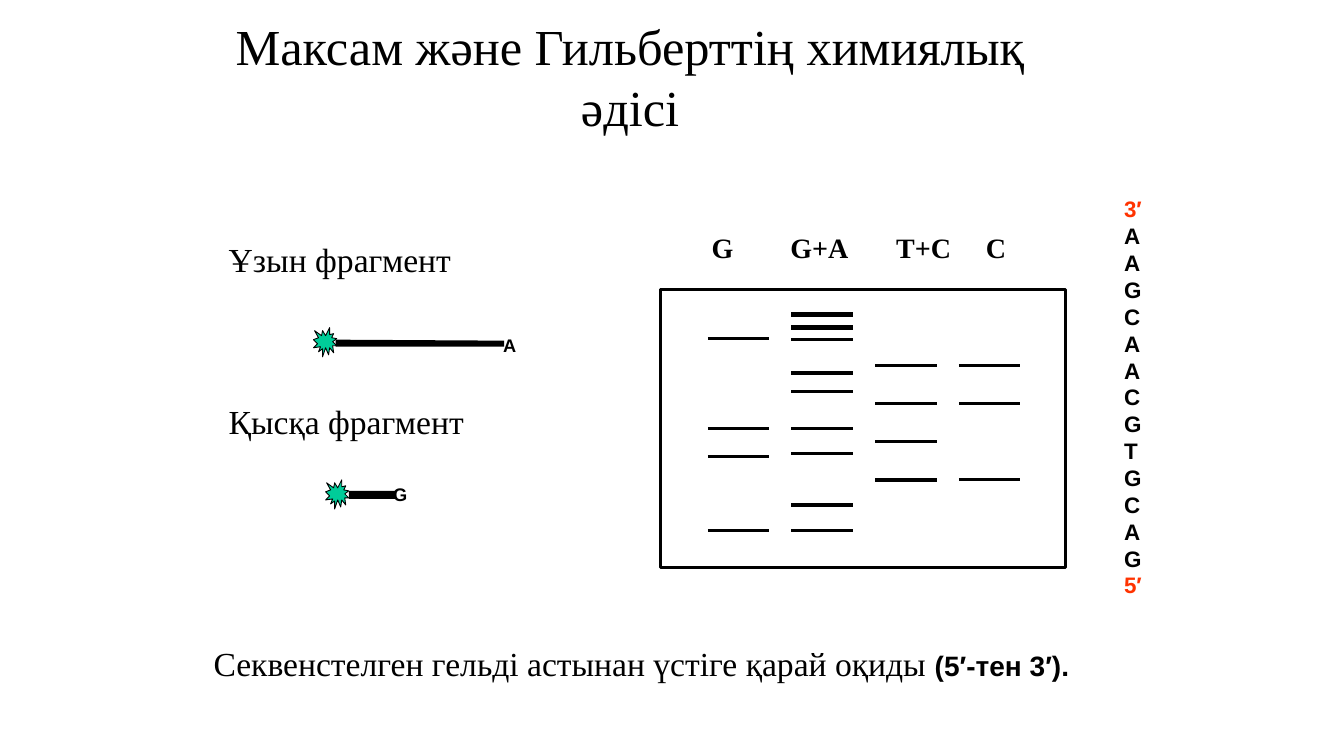
import pptx
import pptx.dml.color
import pptx.enum.shapes
import pptx.enum.text
import pptx.oxml
import pptx.oxml.ns
import pptx.util
from pptx.util import Inches

BLACK, WHITE, RED, GREEN = "000000", "FFFFFF", "FF3300", "00CC99"
SERIF, SANS = "Times New Roman", "Arial"
ALIGN = pptx.enum.text.PP_ALIGN

BAND_WIDTH = 0.61
LANE_LEFT, LANE_STEP = 7.02, 0.83
# Band heights for each lane: G, G+A, T+C, C
LANES = [
    [3.36, 4.25, 4.53, 5.26],
    [3.12, 3.25, 3.37, 3.7, 3.88, 4.25, 4.5, 5.01, 5.26],
    [3.63, 4, 4.38, 4.76],
    [3.63, 4, 4.76],
]
THICK_BANDS = {(1, 3.12), (1, 3.25), (2, 4.76)}
LABEL_TABS = [0.78, 1.83, 2.72]
SEQUENCE = "AAGCAACGTGCAG"

LABEL_STAR = [
    (0.12, 0.08), (0.09, 0.03), (0.08, 0.08), (0.01, 0.03), (0.05, 0.1), (0, 0.12),
    (0.04, 0.16), (0, 0.2), (0.07, 0.19), (0.05, 0.24), (0.09, 0.21), (0.09, 0.29),
    (0.12, 0.2), (0.15, 0.27), (0.16, 0.2), (0.2, 0.25), (0.19, 0.18), (0.23, 0.18),
    (0.19, 0.14), (0.23, 0.11), (0.18, 0.1), (0.2, 0.06), (0.16, 0.07), (0.16, 0),
]


def color(value):
    return pptx.dml.color.RGBColor.from_string(value)


def paint(shape, fill, line=None, line_width=0):
    shape.shadow.inherit = False
    shape.fill.solid()
    shape.fill.fore_color.rgb = color(fill)
    if line:
        shape.line.color.rgb = color(line)
        shape.line.width = pptx.util.Pt(line_width)
    else:
        shape.line.fill.background()


def add_run(paragraph, text, size, font=SERIF, bold=False, fill=BLACK):
    run = paragraph.add_run()
    run.text = text
    run.font.size = pptx.util.Pt(size)
    run.font.name = font
    run.font.bold = bold
    run.font.color.rgb = color(fill)


def add_text_box(slide, left, top, width, height, wrap=True, inset=True):
    """Add an empty text box and return its text frame."""
    box = slide.shapes.add_textbox(Inches(left), Inches(top), Inches(width), Inches(height))
    frame = box.text_frame
    frame.word_wrap = wrap
    if not inset:
        frame.margin_left = frame.margin_right = 0
        frame.margin_top = frame.margin_bottom = 0
    return frame


def add_rectangle(slide, left, top, width, height, *style):
    shape = slide.shapes.add_shape(
        pptx.enum.shapes.MSO_SHAPE.RECTANGLE,
        Inches(left), Inches(top), Inches(width), Inches(height))
    paint(shape, *style)


def add_polygon(slide, left, top, points, *style):
    corners = [(Inches(left + x), Inches(top + y)) for x, y in points]
    builder = slide.shapes.build_freeform(*corners[0])
    builder.add_line_segments(corners[1:], close=True)
    paint(builder.convert_to_shape(), *style)


def add_band(slide, left, top, line_width):
    band = slide.shapes.add_connector(
        pptx.enum.shapes.MSO_CONNECTOR.STRAIGHT,
        Inches(left), Inches(top), Inches(left + BAND_WIDTH), Inches(top))
    band.line.color.rgb = color(BLACK)
    band.line.width = pptx.util.Pt(line_width)
    properties = band._element.spPr
    properties.append(pptx.oxml.parse_xml(
        "<a:effectLst %s/>" % pptx.oxml.ns.nsdecls("a")))


def add_tab_stops(paragraph, positions):
    stops = "".join('<a:tab pos="%d" algn="l"/>' % Inches(p) for p in positions)
    paragraph._p.get_or_add_pPr().append(pptx.oxml.parse_xml(
        "<a:tabLst %s>%s</a:tabLst>" % (pptx.oxml.ns.nsdecls("a"), stops)))


def set_title(slide, text):
    title = slide.shapes.title
    title.left, title.top = Inches(1.75), Inches(0.13)
    title.width, title.height = Inches(9), Inches(1.25)
    frame = title.text_frame
    frame.auto_size = pptx.enum.text.MSO_AUTO_SIZE.NONE
    frame.vertical_anchor = pptx.enum.text.MSO_ANCHOR.MIDDLE
    paragraph = frame.paragraphs[0]
    paragraph.alignment = ALIGN.CENTER
    add_run(paragraph, text, 36)


def add_gel(slide):
    add_rectangle(slide, 6.55, 2.87, 4.02, 2.76, WHITE, BLACK, 2.25)
    for lane, bands in enumerate(LANES):
        for top in bands:
            line_width = 3 if (lane, top) in THICK_BANDS else 2.25
            add_band(slide, LANE_LEFT + lane * LANE_STEP, top, line_width)
    labels = add_text_box(slide, 6.96, 2.24, 3.6, 0.44).paragraphs[0]
    add_tab_stops(labels, LABEL_TABS)
    add_run(labels, "G\tG+A\tT+C\tC", 20, bold=True)


def add_sequence(slide):
    frame = add_text_box(slide, 11.05, 1.89, 0.59, 4.14)
    for index, base in enumerate(["3′", *SEQUENCE, "5′"]):
        paragraph = frame.add_paragraph() if index else frame.paragraphs[0]
        add_run(paragraph, base, 16, SANS, True, RED if "′" in base else BLACK)


def add_fragments(slide):
    frame = add_text_box(slide, 2.17, 2.32, 4.85, 3.2)
    add_run(frame.paragraphs[0], "Ұзын фрагмент", 24)
    short_caption = frame.add_paragraph()
    short_caption.space_before = pptx.util.Pt(87)
    add_run(short_caption, "Қысқа фрагмент", 24)

    long_bar = [(0, 0), (0, 0.07), (1.67, 0.07), (1.67, 0.01)]
    add_polygon(slide, 3.33, 3.37, long_bar, BLACK)
    add_rectangle(slide, 3.46, 4.87, 0.47, 0.08, BLACK)
    for left, top in [(3.11, 3.25), (3.23, 4.76)]:
        add_polygon(slide, left, top, LABEL_STAR, GREEN, BLACK, 0.62)
    for base, left, top in [("A", 4.99, 3.32), ("G", 3.9, 4.79)]:
        end = add_text_box(slide, left, top, 0.19, 0.22, wrap=False, inset=False)
        add_run(end.paragraphs[0], base, 13, SANS, True)


def add_reading_note(slide):
    paragraph = add_text_box(slide, 2.02, 6.33, 8.73, 0.51).paragraphs[0]
    paragraph.alignment = ALIGN.JUSTIFY
    add_run(paragraph, "Секвенстелген гельді астынан үстіге қарай оқиды ", 24)
    add_run(paragraph, "(5′-тен 3′).", 20, SANS, True)


def main():
    presentation = pptx.Presentation()
    presentation.slide_width = Inches(13.33)
    presentation.slide_height = Inches(7.5)
    slide = presentation.slides.add_slide(presentation.slide_layouts[5])
    set_title(slide, "Максам және Гильберттің химиялық әдісі")
    add_gel(slide)
    add_sequence(slide)
    add_fragments(slide)
    add_reading_note(slide)
    presentation.save("out.pptx")


if __name__ == "__main__":
    main()
